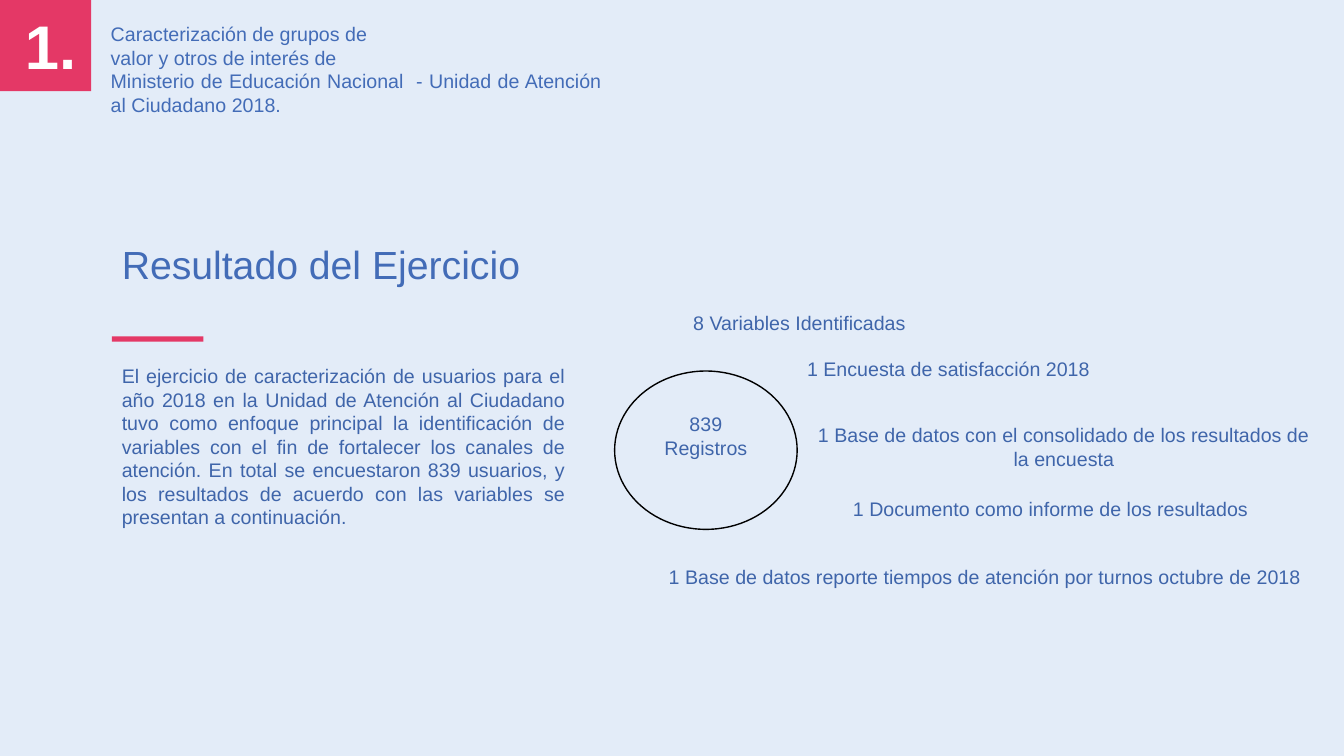
from pptx import Presentation
from pptx.dml.color import RGBColor
from pptx.enum.shapes import MSO_SHAPE as Shape
from pptx.enum.text import MSO_ANCHOR as Anchor, MSO_AUTO_SIZE as AutoSize, PP_ALIGN as Align
from pptx.util import Cm, Pt

COLORS = {
    "background": "E3ECF8",
    "accent": "E43866",
    "heading": "436CB7",
    "body": "3F65AA",
    "white": "FFFFFF",
    "outline": "000000",
}


def write(frame, lines, size=14, color="body", align=Align.LEFT, bold=False):
    for index, line in enumerate(lines):
        first = index == 0 and not frame.text
        paragraph = frame.paragraphs[0] if first else frame.add_paragraph()
        paragraph.alignment = align
        run = paragraph.add_run()
        run.text = line
        run.font.name = "Arial"
        run.font.size = Pt(size)
        run.font.bold = bold
        run.font.color.rgb = RGBColor.from_string(COLORS[color])


def add_text(left, top, width, height, lines, **style):
    frame = slide.shapes.add_textbox(Cm(left), Cm(top), Cm(width), Cm(height)).text_frame
    frame.word_wrap = True
    frame.auto_size = AutoSize.SHAPE_TO_FIT_TEXT
    write(frame, lines, **style)
    return frame


deck = Presentation()
deck.slide_width, deck.slide_height = Cm(33.87), Cm(19.05)
slide = deck.slides.add_slide(deck.slide_layouts[6])
slide.background.fill.solid()
slide.background.fill.fore_color.rgb = RGBColor.from_string(COLORS["background"])

for left, top, width, height in [(0, 0, 2.3, 2.3), (2.82, 8.48, 2.31, 0.13)]:
    accent = slide.shapes.add_shape(Shape.RECTANGLE, Cm(left), Cm(top), Cm(width), Cm(height))
    accent.shadow.inherit = False
    accent.fill.solid()
    accent.fill.fore_color.rgb = RGBColor.from_string(COLORS["accent"])
    accent.line.fill.background()

add_text(0.38, 0.08, 1.93, 2.13, ["1."], size=44, color="white", bold=True)
add_text(2.54, 0.43, 12.88, 2.64, [
    "Caracterización de grupos de",
    "valor y otros de interés de",
    "Ministerio de Educación Nacional  - Unidad de Atención al Ciudadano 2018.",
], color="heading", align=Align.JUSTIFY)

result = add_text(2.82, 5.92, 11.68, 10.85, ["Resultado del Ejercicio"], size=28, color="heading")
write(result, [
    "El ejercicio de caracterización de usuarios para el año 2018 en la Unidad de Atención "
    "al Ciudadano tuvo como enfoque principal la identificación de variables con el fin de "
    "fortalecer los canales de atención. En total se encuestaron 839 usuarios, y los resultados "
    "de acuerdo con las variables se presentan a continuación."
], align=Align.JUSTIFY)
result.paragraphs[1].space_before = Pt(55)

records = slide.shapes.add_shape(Shape.OVAL, Cm(15.49), Cm(9.35), Cm(4.6), Cm(3.99))
records.shadow.inherit = False
records.fill.background()
records.line.color.rgb = RGBColor.from_string(COLORS["outline"])
records.line.width = Pt(1)
records.text_frame.vertical_anchor = Anchor.MIDDLE
records.text_frame.margin_bottom = Cm(0.86)
write(records.text_frame, ["839", "Registros"], align=Align.CENTER)

findings = [
    (17.22, 7.72, 7.39, 0.86, Align.LEFT, "8 Variables Identificadas"),
    (20.09, 8.86, 10.19, 0.86, Align.LEFT, "1 Encuesta de satisfacción 2018"),
    (20.32, 10.54, 12.98, 1.45, Align.CENTER,
     "1 Base de datos con el consolidado de los resultados de la encuesta"),
    (20.65, 12.4, 11.66, 0.86, Align.CENTER, "1 Documento como informe de los resultados"),
    (16.33, 14.12, 16.99, 0.86, Align.CENTER,
     "1 Base de datos reporte tiempos de atención por turnos octubre de 2018"),
]
for left, top, width, height, align, finding in findings:
    add_text(left, top, width, height, [finding], align=align)

deck.save("out.pptx")
